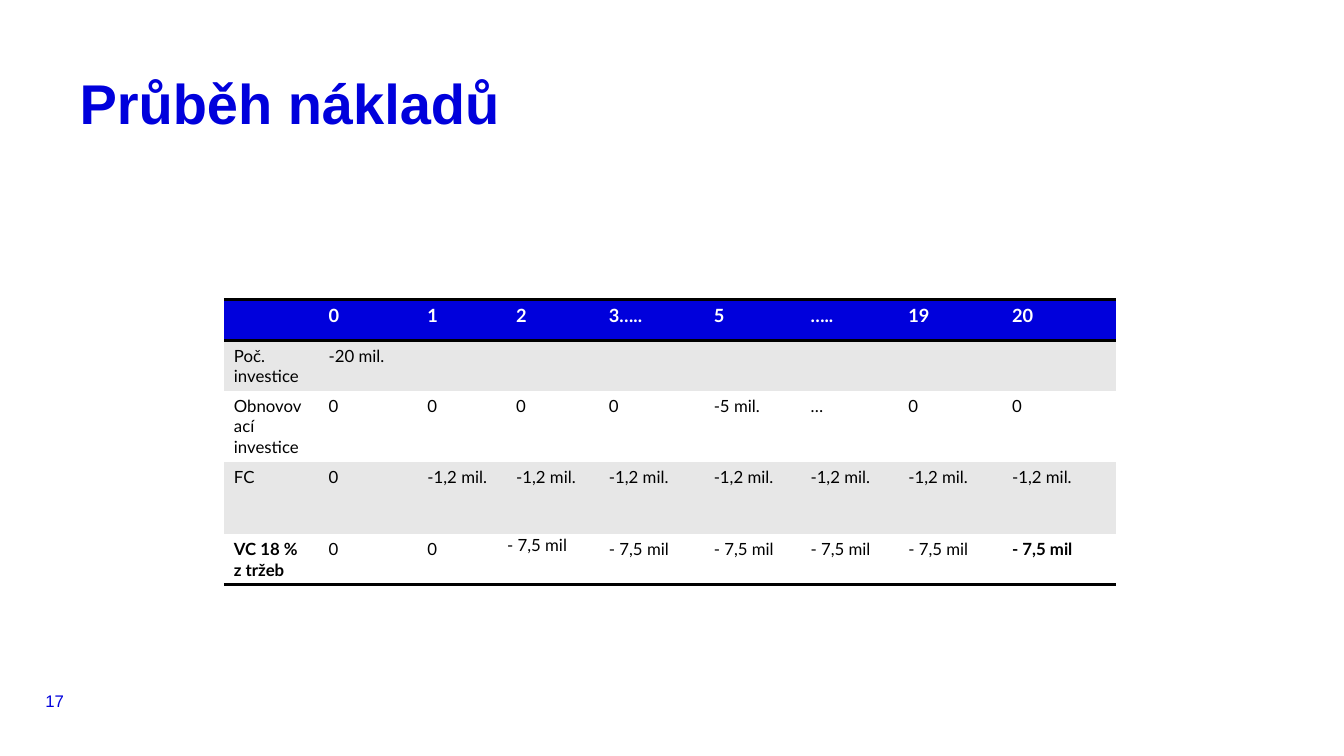
from dataclasses import dataclass

from pptx import Presentation
from pptx.dml.color import RGBColor as RGB
from pptx.enum.text import MSO_ANCHOR as Anchor
from pptx.oxml.ns import qn
from pptx.util import Inches, Pt
from lxml.etree import SubElement as Sub


@dataclass(frozen=True)
class Theme:
    blue: str = "0000DC"
    black: str = "000000"
    white: str = "FFFFFF"
    band: str = "E7E7E7"
    sans: str = "Arial"
    body: str = "Lato"
    title: int = 40
    head: int = 13
    cell: int = 12
    rule: int = 2
    plain: str = "{2D5ABB26-0587-4C30-8999-92F81FD0307C}"


COLS = [0.94, 0.98, 0.88, 0.92, 1.04, 0.96, 0.97, 1.03, 1.13]
ROWS = [0.41, 0.5, 0.7, 0.72, 0.5]
COSTS = [
    ["", "0", "1", "2", "3…..", "5", "…..", "19", "20"],
    ["Poč. investice", "-20 mil."] + [""] * 7,
    ["Obnovovací investice"] + ["0"] * 4 + ["-5 mil.", "…", "0", "0"],
    ["FC", "0"] + ["-1,2 mil."] * 7,
    ["VC 18 % z tržeb", "0", "0"] + ["- 7,5 mil"] * 6,
]


class Page:
    def __init__(self, slide, theme):
        self.slide = slide
        self.theme = theme

    def run(self, para, text, size, color, font, bold=False):
        run = para.add_run()
        run.text = text
        run.font.size = Pt(size)
        run.font.name = font
        run.font.bold = bold
        run.font.color.rgb = RGB.from_string(color)

    def label(self, text, box, size, bold=False, anchor=Anchor.TOP, line=None):
        """Add blue text in a box without margins; line is an exact pitch in points."""
        frame = self.slide.shapes.add_textbox(*map(Inches, box)).text_frame
        frame.word_wrap = True
        frame.vertical_anchor = anchor
        frame.margin_left = frame.margin_right = 0
        frame.margin_top = frame.margin_bottom = 0
        para = frame.paragraphs[0]
        if line:
            para.line_spacing = Pt(line)
        self.run(para, text, size, self.theme.blue, self.theme.sans, bold)

    def rule(self, cell, side):
        """Draw a border on one side of a cell: lnT or lnB."""
        props = cell._tc.get_or_add_tcPr()
        line = Sub(props, qn("a:" + side), w=str(Pt(self.theme.rule)))
        fill = Sub(line, qn("a:solidFill"))
        Sub(fill, qn("a:srgbClr"), val=self.theme.black)

    def table(self, data, left, top, cols, rows):
        look = self.theme
        size = Inches(sum(cols)), Inches(sum(rows))
        grid = self.slide.shapes.add_table(
            len(rows), len(cols), Inches(left), Inches(top), *size).table
        grid.horz_banding = False
        grid._tbl.tblPr.find(qn("a:tableStyleId")).text = look.plain
        for col, width in zip(grid.columns, cols):
            col.width = Inches(width)
        last = len(rows) - 1
        for r, (row, high) in enumerate(zip(data, rows)):
            grid.rows[r].height = Inches(high)
            head = r == 0
            fill = look.blue if head else look.band if r % 2 else look.white
            for c, text in enumerate(row):
                cell = grid.cell(r, c)
                if head:
                    self.rule(cell, "lnT")
                if head or r == last:
                    self.rule(cell, "lnB")
                cell.fill.solid()
                cell.fill.fore_color.rgb = RGB.from_string(fill)
                if text:
                    edge = r == last and c in (0, len(cols) - 1)
                    self.run(cell.text_frame.paragraphs[0], text,
                             look.head if head else look.cell,
                             look.white if head else look.black,
                             look.body, head or edge)
        return grid


def main():
    deck = Presentation()
    deck.slide_width, deck.slide_height = Inches(13.33), Inches(7.5)
    theme = Theme()
    page = Page(deck.slides.add_slide(deck.slide_layouts[6]), theme)

    page.label("Průběh nákladů", (0.79, 0.79, 11.76, 0.49),
               theme.title, bold=True, line=theme.title)
    page.label("17", (0.45, 6.81, 0.28, 0.28), theme.cell, anchor=Anchor.MIDDLE)

    grid = page.table(COSTS, 2.22, 2.97, COLS, ROWS)
    tight = grid.cell(4, 3)
    tight.margin_left = tight.margin_right = tight.margin_top = Inches(0.01)
    tight.margin_bottom = 0

    deck.save("out.pptx")


if __name__ == "__main__":
    main()
